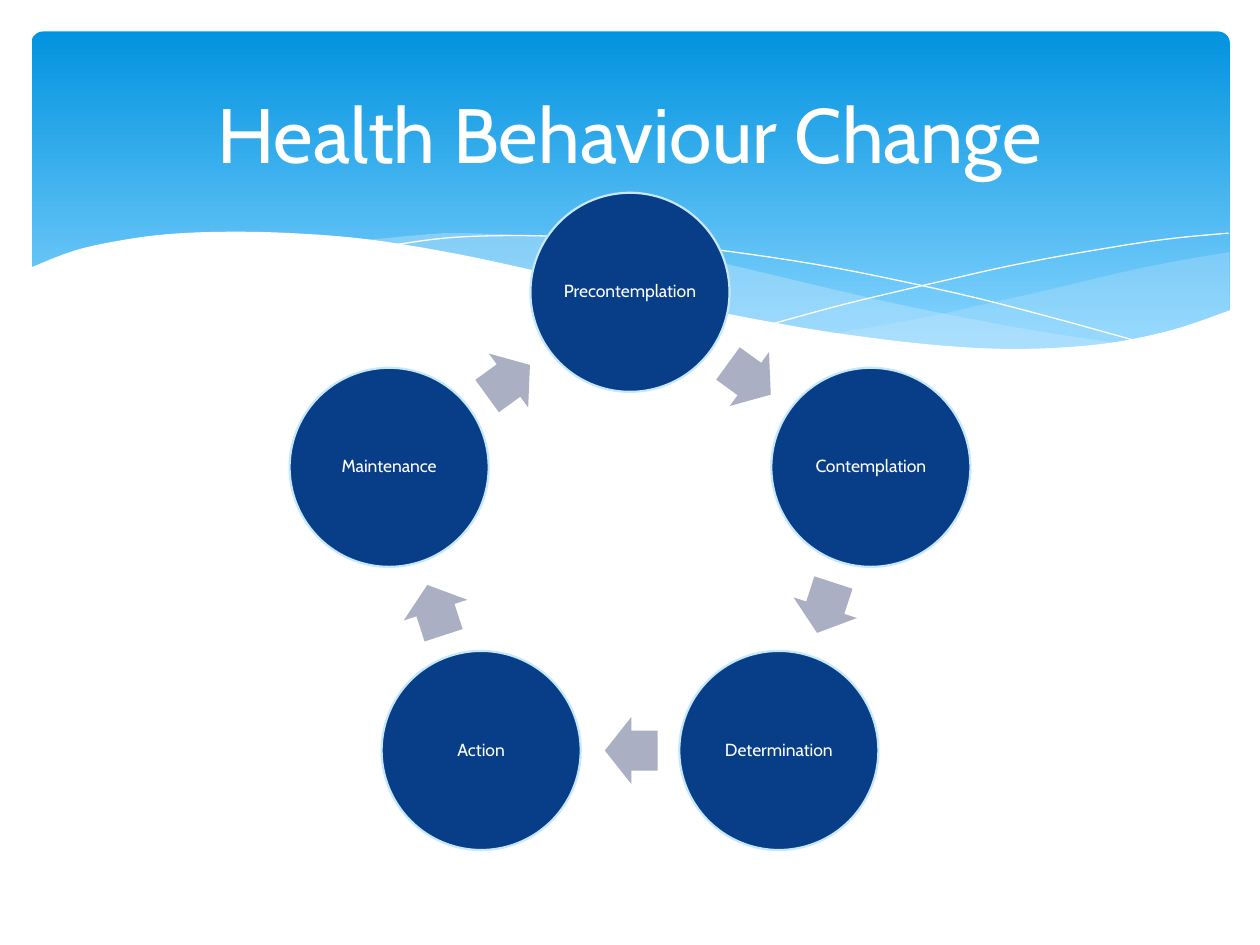
import math
from dataclasses import dataclass
from typing import Optional

from pptx import Presentation
from pptx import util as u
from pptx.dml.color import RGBColor
from pptx.enum import shapes, text
from pptx.oxml.ns import qn

WHITE, PALE, NAVY, GREY = "FFFFFF", "C6E7FC", "073E87", "ABAFC3"
KIND = shapes.MSO_SHAPE


@dataclass
class Wave:
    """Smooth runs of points in inches, joined end to end."""
    runs: list
    fill: Optional[str] = None
    alpha: int = 100


WAVES = [
    Wave([[(9.76, 2), (9.35, 2.07), (8.91, 2.16), (8.32, 2.3), (7.79, 2.42),
           (7.29, 2.53), (6.61, 2.65)],
          [(6.61, 2.65), (7.05, 2.71), (7.57, 2.76), (8.14, 2.78), (8.63, 2.75),
           (9.13, 2.67), (9.49, 2.57), (9.76, 2.47)]], PALE, 29),
    Wave([[(8.93, 2.73), (8.37, 2.65), (7.75, 2.54), (7.06, 2.4), (6.29, 2.22),
           (5.69, 2.08), (5.14, 1.98), (4.65, 1.91), (4.2, 1.87), (3.61, 1.85),
           (3.28, 1.87), (2.86, 1.91)],
          [(2.86, 1.91), (3.42, 1.99), (4.04, 2.11), (4.49, 2.22), (5.3, 2.4),
           (6.01, 2.55), (6.65, 2.66), (7.22, 2.74), (7.73, 2.77), (8.18, 2.78),
           (8.57, 2.77), (8.93, 2.73)]], PALE, 40),
    Wave([[(3.09, 1.95), (3.53, 1.89), (4.01, 1.87), (4.5, 1.88), (5.1, 1.92),
           (5.82, 2), (6.65, 2.13), (7.6, 2.33), (8.31, 2.51), (9.07, 2.72)]]),
    Wave([[(6.13, 2.57), (6.72, 2.41), (7.48, 2.23), (8.06, 2.1), (8.66, 1.99),
           (9.24, 1.9), (9.75, 1.85)]]),
    Wave([[(9.77, 2.46), (9.3, 2.62), (8.75, 2.73), (8.09, 2.77), (7.44, 2.74),
           (6.68, 2.65), (6.03, 2.54), (5.29, 2.39), (4.47, 2.2), (3.65, 2.02),
           (2.92, 1.9), (2.3, 1.85), (1.77, 1.84), (1.32, 1.86), (0.95, 1.91),
           (0.59, 1.99), (0.23, 2.13)],
          [(0.23, 3.29), (9.77, 3.29)]], WHITE),
]
STAGES = ["Precontemplation", "Contemplation", "Determination", "Action", "Maintenance"]
HUB_X, HUB_Y, RING, DISC = 5, 4.33, 2.01, 1.58
ARROW_W, ARROW_H, BACK = 0.42, 0.53, 0.01


def color(code: str) -> RGBColor:
    return RGBColor.from_string(code)


def style(item, values: dict) -> None:
    for name, value in values.items():
        setattr(item, name, value)


def paint(shape, fill: Optional[str] = None, line: Optional[str] = None, width: float = 0) -> None:
    shape.shadow.inherit = False
    if fill:
        shape.fill.solid()
        shape.fill.fore_color.rgb = color(fill)
    else:
        shape.fill.background()
    if line:
        shape.line.color.rgb = color(line)
        shape.line.width = u.Pt(width)
    else:
        shape.line.fill.background()


def write(shape, words: str, size: float, inset: float, space: float = 1) -> None:
    frame = shape.text_frame
    edges = ("margin_left", "margin_top", "margin_right", "margin_bottom")
    style(frame, dict.fromkeys(edges, u.Inches(inset)))
    style(frame, {"word_wrap": True, "vertical_anchor": text.MSO_ANCHOR.MIDDLE})
    para = frame.paragraphs[0]
    style(para, {"text": words, "alignment": text.PP_ALIGN.CENTER, "line_spacing": space})
    font = para.runs[0].font
    style(font, {"name": "Cabin", "size": u.Pt(size)})
    font.color.rgb = color(WHITE)


def smooth(run: list, steps: int = 5) -> list:
    """Catmull-Rom curve through the points of a run."""
    if len(run) < 3:
        return run
    ends = [run[0], *run, run[-1]]
    out = [run[0]]
    for a, b, c, d in zip(ends, ends[1:], ends[2:], ends[3:]):
        for step in range(1, steps + 1):
            t = step / steps
            out.append(tuple(
                q + t / 2 * (r - p + t * (2 * p - 5 * q + 4 * r - s
                                          + t * (3 * (q - r) + s - p)))
                for p, q, r, s in zip(a, b, c, d)))
    return out


def draw_wave(slide, wave: Wave) -> None:
    dots = [(u.Inches(x), u.Inches(y)) for run in wave.runs for x, y in smooth(run)]
    pen = slide.shapes.build_freeform(*dots[0])
    pen.add_line_segments(dots[1:], close=bool(wave.fill))
    shape = pen.convert_to_shape()
    paint(shape, wave.fill, None if wave.fill else WHITE)
    if wave.alpha < 100:
        tint = shape.fill._xPr.find(".//" + qn("a:srgbClr"))
        tint.makeelement(qn("a:alpha"))
        alpha = tint.makeelement(qn("a:alpha"), {"val": str(wave.alpha * 1000)})
        tint.append(alpha)


def add_mid(slide, kind, x: float, y: float, wide: float, high: float):
    """Add a preset shape centred on a point."""
    return slide.shapes.add_shape(kind, u.Inches(x - wide / 2), u.Inches(y - high / 2),
                                  u.Inches(wide), u.Inches(high))


def orbit(turn: float, reach: float) -> tuple:
    """Point on the ring, with the turn in degrees clockwise from the top."""
    rad = math.radians(turn)
    return HUB_X + reach * math.sin(rad), HUB_Y - reach * math.cos(rad)


def draw_banner(slide) -> None:
    panel = slide.shapes.add_shape(KIND.ROUNDED_RECTANGLE, u.Inches(0.25), u.Inches(0.25),
                                   u.Inches(9.51), u.Inches(2.7))
    panel.adjustments[0] = 0.034
    paint(panel)
    panel.fill.gradient()
    panel.fill.gradient_angle = 270
    for stop, (place, code) in zip(panel.fill.gradient_stops, [(0, "0293E0"), (0.9, "83D3FE")]):
        stop.position = place
        stop.color.rgb = color(code)
    for wave in WAVES:
        draw_wave(slide, wave)


def draw_cycle(slide) -> None:
    pitch = 360 / len(STAGES)
    for i, stage in enumerate(STAGES):
        disc = add_mid(slide, KIND.OVAL, *orbit(i * pitch, RING), DISC, DISC)
        paint(disc, NAVY, PALE, 1.25)
        write(disc, stage, 10, 0.01, 0.9)

        turn = (i + 0.5) * pitch
        x, y = orbit(turn, RING * math.cos(math.radians(pitch / 2)))
        rad = math.radians(turn)
        arrow = add_mid(slide, KIND.RIGHT_ARROW, x - BACK * math.cos(rad),
                        y - BACK * math.sin(rad), ARROW_W, ARROW_H)
        arrow.rotation = turn
        arrow.adjustments[0], arrow.adjustments[1] = 0.6, 0.5
        paint(arrow, GREY)


def main() -> None:
    deck = Presentation()
    style(deck, {"slide_width": u.Inches(10), "slide_height": u.Inches(7.5)})
    slide = deck.slides.add_slide(deck.slide_layouts[6])
    draw_banner(slide)
    title = slide.shapes.add_textbox(u.Inches(0.5), u.Inches(0.37), u.Inches(9), u.Inches(1.37))
    write(title, "Health Behaviour Change", 44, 0.05)
    draw_cycle(slide)
    deck.save("out.pptx")


if __name__ == "__main__":
    main()
